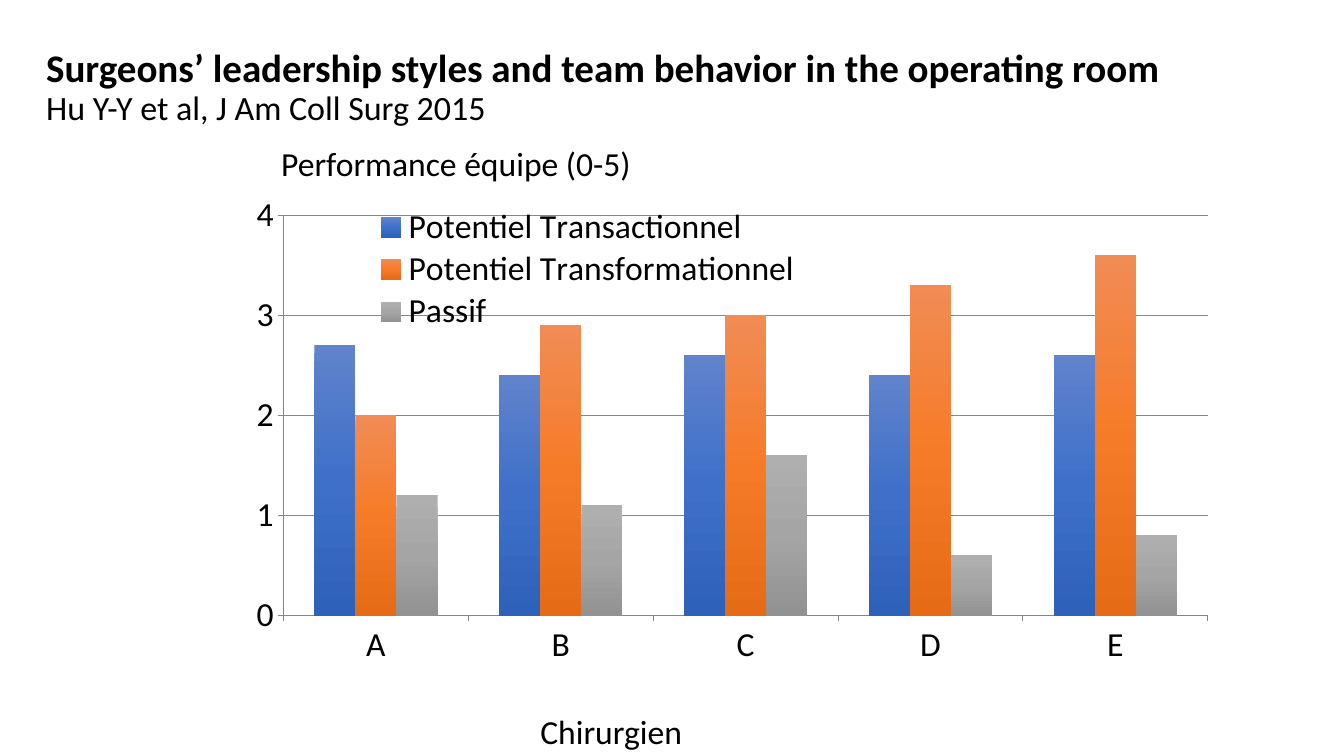
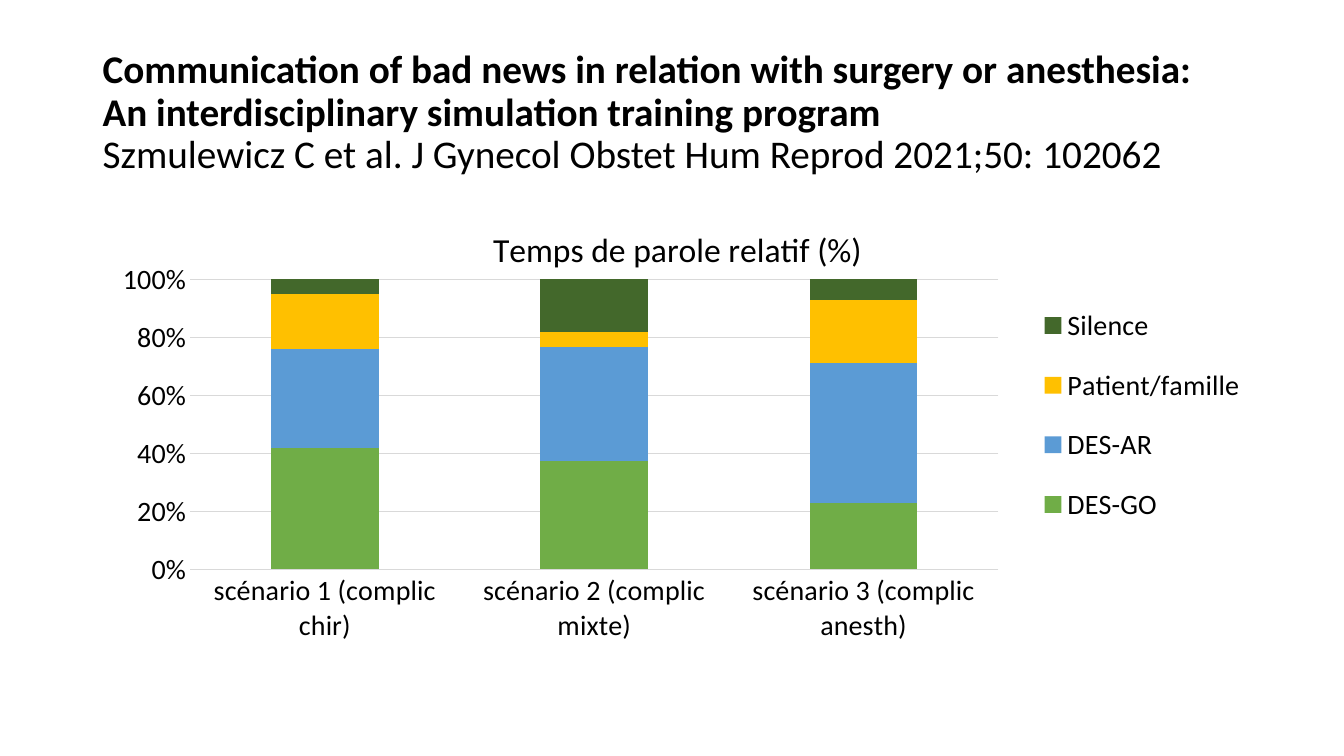
"""Build two slides on team communication in the operating room, one chart each."""
from copy import deepcopy

from lxml import etree
from pptx import Presentation
from pptx.chart.data import CategoryChartData
from pptx.dml.color import RGBColor
from pptx.enum import chart as charts, text
from pptx.oxml.ns import qn
from pptx.util import Emu, Pt

FONT = "Calibri"
PX = 9144
COLORS = {
    "ink": "000000", "axis": "868686", "rule": "D9D9D9",
    "green": "70AD47", "sky": "5B9BD5", "gold": "FFC000", "forest": "43682B",
}
GRADIENTS = {
    "blue": ("6083CB", "3E70CA", "2E61BA"),
    "orange": ("F18C55", "F67B28", "E56B17"),
    "grey": ("AFAFAF", "A5A5A5", "929292"),
}
SLIDES = [
    {
        "title": (36, 40, 1269, 95),
        "lines": [("Surgeons’ leadership styles and team behavior in the operating room", 27.9, True),
                  ("Hu Y-Y et al, J Am Coll Surg 2015", 24.3, False)],
        "captions": [("Performance équipe (0-5)", (269, 137, 370, 50)),
                     ("Chirurgien", (526, 700, 162, 50))],
        "chart": {
            "at": (217, 187, 1002, 495),
            "kind": charts.XL_CHART_TYPE.COLUMN_CLUSTERED,
            "categories": ["A", "B", "C", "D", "E"],
            "series": [("Potentiel Transactionnel", (2.7, 2.4, 2.6, 2.4, 2.6), "blue"),
                       ("Potentiel Transformationnel", (2, 2.9, 3, 3.3, 3.6), "orange"),
                       ("Passif", (1.2, 1.1, 1.6, 0.6, 0.8), "grey")],
            "size": 24, "grid": "axis", "tick": charts.XL_TICK_MARK.OUTSIDE,
            "format": "General", "top": 4, "overlap": 0, "title": None,
            "plot": (0.064, 0.054, 0.915, 0.802),
            "legend": (0.15, 0.035, 0.43, 0.255),
        },
    },
    {
        "title": (92, 40, 1150, 145),
        "lines": [("Communication of bad news in relation with surgery or anesthesia: "
                   "An interdisciplinary simulation training program", 28, True),
                  ("Szmulewicz C et al. J Gynecol Obstet Hum Reprod 2021;50: 102062", 28, False)],
        "captions": [],
        "chart": {
            "at": (92, 200, 1150, 476),
            "kind": charts.XL_CHART_TYPE.COLUMN_STACKED_100,
            "categories": ["scénario 1 (complic chir)", "scénario 2 (complic mixte)",
                           "scénario 3 (complic anesth)"],
            "series": [("DES-GO", (42, 37, 23), "green"),
                       ("DES-AR", (34, 39, 48), "sky"),
                       ("Patient/famille", (19, 5, 22), "gold"),
                       ("Silence", (5, 18, 7), "forest")],
            "size": 20, "grid": "rule", "tick": charts.XL_TICK_MARK.NONE,
            "format": "0%", "top": None, "overlap": 100,
            "title": ("Temps de parole relatif (%)", (0.34, 0.04)),
            "plot": (0.084, 0.162, 0.697, 0.605),
            "legend": (0.815, 0.17, 0.18, 0.55),
        },
    },
]


def scale(at):
    return [Emu(length * PX) for length in at]


def rgb(value):
    return RGBColor.from_string(value)


def style_font(font, size):
    font.name = FONT
    font.size = Pt(size)
    font.color.rgb = rgb(COLORS["ink"])


def style_line(line, color):
    line.color.rgb = rgb(color)
    line.width = Pt(0.75)


def add_title(page, at, lines):
    frame = page.shapes.add_textbox(*scale(at)).text_frame
    frame.word_wrap = True
    frame.vertical_anchor = text.MSO_ANCHOR.MIDDLE
    para = frame.paragraphs[0]
    para.line_spacing = 0.9
    for index, (words, size, bold) in enumerate(lines):
        if index:
            para.add_line_break()
        span = para.add_run()
        span.text = words
        style_font(span.font, size)
        span.font.bold = bold


def add_caption(page, words, at):
    frame = page.shapes.add_textbox(*scale(at)).text_frame
    frame.word_wrap = False
    para = frame.paragraphs[0]
    para.text = words
    style_font(para.font, 24)


def set_layout(part, index, position, inner=False):
    for old in part.findall(qn("c:layout")):
        part.remove(old)
    layout = etree.Element(qn("c:layout"))
    manual = etree.SubElement(layout, qn("c:manualLayout"))
    settings = [("layoutTarget", "inner")] if inner else []
    settings += [("xMode", "edge"), ("yMode", "edge")]
    settings += zip("xywh", position)
    for name, value in settings:
        etree.SubElement(manual, qn(f"c:{name}")).set("val", str(value))
    part.insert(index, layout)


def fill_series(series, color):
    fill = series.format.fill
    if color in COLORS:
        fill.solid()
        fill.fore_color.rgb = rgb(COLORS[color])
        return
    fill.gradient()
    fill.gradient_angle = 270
    stops = next(series._element.iter(qn("a:gsLst")))
    stops.insert(1, deepcopy(stops[0]))
    for stop, position, value in zip(fill.gradient_stops, (0, 0.5, 1), GRADIENTS[color]):
        stop.position = position
        stop.color.rgb = rgb(value)


def style_axes(chart, spec):
    grid = COLORS[spec["grid"]]
    for axis in (chart.category_axis, chart.value_axis):
        style_font(axis.tick_labels.font, spec["size"])
        axis.major_tick_mark = spec["tick"]
        axis.minor_tick_mark = charts.XL_TICK_MARK.NONE
        style_line(axis.format.line, grid)
    values = chart.value_axis
    values.has_major_gridlines = True
    style_line(values.major_gridlines.format.line, grid)
    values.tick_labels.number_format = spec["format"]
    values.tick_labels.number_format_is_linked = False
    if spec["top"]:
        values.minimum_scale, values.maximum_scale, values.major_unit = 0, spec["top"], 1
    else:
        values.format.line.fill.background()


def add_chart(page, spec):
    data = CategoryChartData()
    data.categories = spec["categories"]
    for name, values, _ in spec["series"]:
        data.add_series(name, values)
    chart = page.shapes.add_chart(spec["kind"], *scale(spec["at"]), data).chart
    style_font(chart.font, spec["size"])
    style_axes(chart, spec)

    plot = chart.plots[0]
    plot.gap_width, plot.overlap, plot.vary_by_categories = 150, spec["overlap"], False
    for series, (_, _, color) in zip(plot.series, spec["series"]):
        fill_series(series, color)
    set_layout(next(chart._chartSpace.iter(qn("c:plotArea"))), 0, spec["plot"], inner=True)

    chart.has_legend = True
    chart.legend.position = charts.XL_LEGEND_POSITION.RIGHT
    chart.legend.include_in_layout = False
    style_font(chart.legend.font, spec["size"])
    set_layout(chart.legend._element, 1, spec["legend"])

    chart.has_title = bool(spec["title"])
    if spec["title"]:
        words, position = spec["title"]
        para = chart.chart_title.text_frame.paragraphs[0]
        para.text = words
        style_font(para.font, 24)
        para.font.bold = False
        set_layout(chart.chart_title._element, 1, position)


def main():
    deck = Presentation()
    deck.slide_width, deck.slide_height = scale((1333, 750))
    for content in SLIDES:
        page = deck.slides.add_slide(deck.slide_layouts[6])
        add_title(page, content["title"], content["lines"])
        add_chart(page, content["chart"])
        for words, at in content["captions"]:
            add_caption(page, words, at)
    deck.save("out.pptx")


if __name__ == "__main__":
    main()
